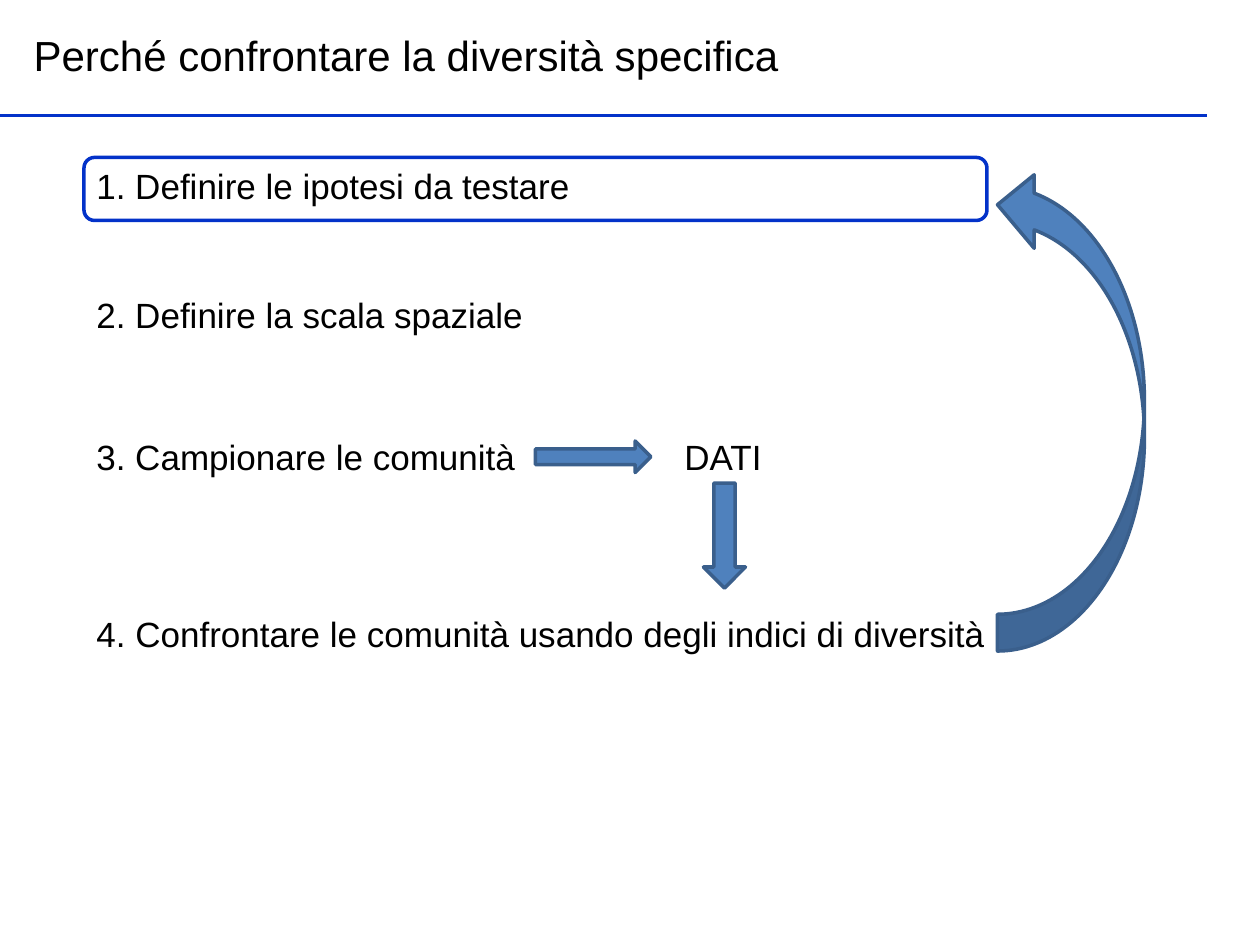
import pptx
import pptx.util
import pptx.dml.color
import pptx.enum.shapes
import pptx.enum.text
import pptx.oxml
import pptx.oxml.ns

Pt = pptx.util.Pt
SHAPE = pptx.enum.shapes.MSO_SHAPE
BLACK = pptx.dml.color.RGBColor(0x00, 0x00, 0x00)
BLUE = pptx.dml.color.RGBColor(0x03, 0x32, 0xC9)
ARROW_FILL = pptx.dml.color.RGBColor(0x4F, 0x81, 0xBD)
ARROW_LINE = pptx.dml.color.RGBColor(0x3A, 0x5F, 0x8C)


def write_text(shape, text, size):
    frame = shape.text_frame
    frame.text = text
    frame.word_wrap = True
    frame.auto_size = pptx.enum.text.MSO_AUTO_SIZE.NONE
    frame.vertical_anchor = pptx.enum.text.MSO_ANCHOR.MIDDLE
    paragraph = frame.paragraphs[0]
    paragraph.alignment = pptx.enum.text.PP_ALIGN.LEFT
    font = paragraph.runs[0].font
    font.name = "Arial"
    font.size = Pt(size)
    font.color.rgb = BLACK


presentation = pptx.Presentation()
presentation.slide_width = Pt(720)
presentation.slide_height = Pt(540)
slide = presentation.slides.add_slide(presentation.slide_layouts[5])

# Title and the rule below it
title = slide.shapes.title
title.left, title.top, title.width, title.height = Pt(12), Pt(13), Pt(612), Pt(36)
write_text(title, "Perché confrontare la diversità specifica", 24)

rule = slide.shapes.add_connector(
    pptx.enum.shapes.MSO_CONNECTOR.STRAIGHT, Pt(0), Pt(66), Pt(690), Pt(66))
rule.line.color.rgb = BLUE
rule.line.width = Pt(2)
rule._element.spPr.append(
    pptx.oxml.parse_xml(f"<a:effectLst {pptx.oxml.ns.nsdecls('a')}/>"))

# Steps and the data label: left, top, width, text
labels = [
    (48, 90, 318, "1. Definire le ipotesi da testare"),
    (48, 164, 318, "2. Definire la scala spaziale"),
    (48, 245, 318, "3. Campionare le comunità"),
    (48, 346.5, 528, "4. Confrontare le comunità usando degli indici di diversità"),
    (384, 245, 72, "DATI"),
]
for left, top, width, text in labels:
    label = slide.shapes.add_textbox(Pt(left), Pt(top), Pt(width), Pt(31.5))
    write_text(label, text, 20)

# Arrows: step to data, data to comparison, comparison back to hypotheses
arrows = [
    (SHAPE.RIGHT_ARROW, 306, 252, 66, 18, 0),
    (SHAPE.RIGHT_ARROW, 384, 294, 60, 24, 90),
    (SHAPE.CURVED_UP_ARROW, 474, 192, 276, 84, 270),
]
for kind, left, top, width, height, rotation in arrows:
    arrow = slide.shapes.add_shape(kind, Pt(left), Pt(top), Pt(width), Pt(height))
    arrow.rotation = rotation
    arrow.shadow.inherit = False
    arrow.fill.solid()
    arrow.fill.fore_color.rgb = ARROW_FILL
    arrow.line.color.rgb = ARROW_LINE
    arrow.line.width = Pt(2)

# Frame around the first step
frame_box = slide.shapes.add_shape(
    SHAPE.ROUNDED_RECTANGLE, Pt(48), Pt(90), Pt(516), Pt(36))
frame_box.shadow.inherit = False
frame_box.fill.background()
frame_box.line.color.rgb = BLUE
frame_box.line.width = Pt(2)

presentation.save("out.pptx")
